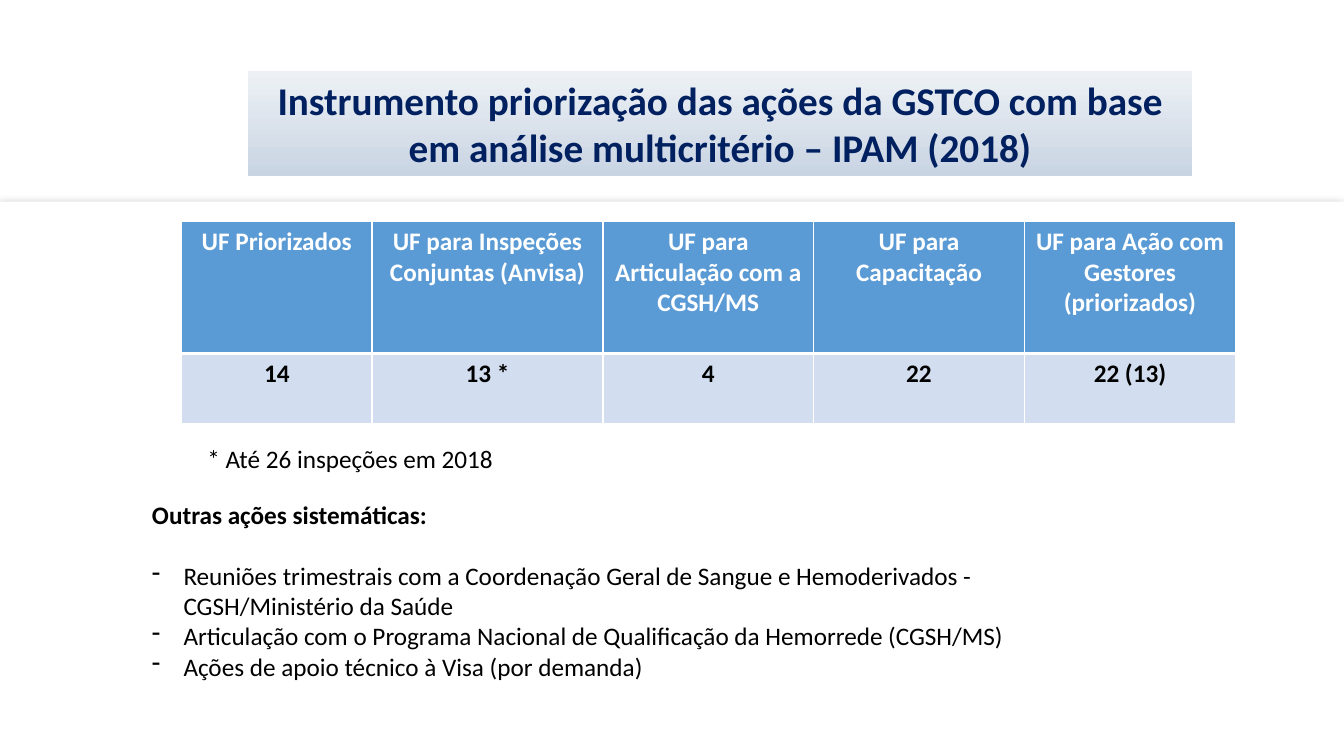
"""Build the slide on the IPAM prioritisation of GSTCO actions."""
from dataclasses import dataclass

from lxml import etree
from pptx import Presentation
from pptx.dml.color import RGBColor
from pptx.enum import shapes, text
from pptx.oxml import ns
from pptx.util import Pt


@dataclass(frozen=True)
class Theme:
    """Colours, type sizes and font of the slide."""
    font: str = "Calibri"
    title_size: int = 28
    body_size: int = 18
    white: str = "FFFFFF"
    black: str = "000000"
    navy: str = "002060"
    header: str = "5B9BD5"
    row: str = "D2DEEF"
    shadow: str = "A6A6A6"
    title_dark: str = "C9D4E3"
    title_light: str = "EDF1F5"


THEME = Theme()
TITLE = ("Instrumento priorização das ações da GSTCO com base "
         "em análise multicritério – IPAM (2018)")
ROWS = [
    ["UF Priorizados", "UF para Inspeções Conjuntas (Anvisa)",
     "UF para Articulação com a CGSH/MS", "UF para Capacitação",
     "UF para Ação com Gestores (priorizados)"],
    ["14", "13 *", "4", "22", "22 (13)"],
]
COLUMN_WIDTHS = [136, 165, 150.5, 150.5, 151]
ROW_HEIGHTS = [94.5, 50]
NOTE = "* Até 26 inspeções em 2018"
ACTIONS_HEADING = "Outras ações sistemáticas:"
ACTIONS = [
    "Reuniões trimestrais com a Coordenação Geral de Sangue e Hemoderivados - "
    "CGSH/Ministério da Saúde",
    "Articulação com o Programa Nacional de Qualificação da Hemorrede (CGSH/MS)",
    "Ações de apoio técnico à Visa (por demanda)",
]


def rgb(value):
    """Return the colour of a hex string."""
    return RGBColor.from_string(value)


def add_xml(parent, tag, **attributes):
    """Append a DrawingML element and return it."""
    values = {name: str(value) for name, value in attributes.items()}
    return etree.SubElement(parent, ns.qn(tag), values)


def style(p, size, color, bold=False, align=None):
    """Format the runs of a paragraph."""
    p.alignment = align
    for r in p.runs:
        r.font.name = THEME.font
        r.font.size = Pt(size)
        r.font.bold = bold
        r.font.color.rgb = rgb(color)


def add_box(s, box):
    """Add a wrapping text box and return its text frame."""
    tf = s.shapes.add_textbox(*map(Pt, box)).text_frame
    tf.word_wrap = True
    return tf


def add_rectangle(s, box):
    """Add a rectangle without line or inherited shadow."""
    sp = s.shapes.add_shape(shapes.MSO_SHAPE.RECTANGLE, *map(Pt, box))
    sp.shadow.inherit = False
    sp.line.fill.background()
    return sp


def add_panel(s, box):
    """Add the white content panel with its soft shadow."""
    sp = add_rectangle(s, box)
    sp.fill.solid()
    sp.fill.fore_color.rgb = rgb(THEME.white)
    effects = sp._element.spPr.find(ns.qn("a:effectLst"))
    shadow = add_xml(effects, "a:outerShdw", blurRad=Pt(5), dist=0, dir=0,
                     rotWithShape=0)
    color = add_xml(shadow, "a:srgbClr", val=THEME.shadow)
    add_xml(color, "a:alpha", val=42000)


def add_title(s, box):
    """Add the title on its gradient band."""
    sp = add_rectangle(s, box)
    sp.fill.gradient()
    sp.fill.gradient_angle = 90
    for stop, color in zip(sp.fill.gradient_stops,
                           (THEME.title_dark, THEME.title_light)):
        stop.color.rgb = rgb(color)
    tf = sp.text_frame
    tf.word_wrap = True
    tf.vertical_anchor = text.MSO_ANCHOR.TOP
    tf.text = TITLE
    style(tf.paragraphs[0], THEME.title_size, THEME.navy, True,
          text.PP_ALIGN.CENTER)


def add_borders(cell, top, bottom):
    """Draw the white borders of a cell."""
    tc_pr = cell._tc.get_or_add_tcPr()
    for side, width in (("L", 1), ("R", 1), ("T", top), ("B", bottom)):
        line = add_xml(tc_pr, f"a:ln{side}", w=Pt(width))
        add_xml(add_xml(line, "a:solidFill"), "a:srgbClr", val=THEME.white)


def add_priorities(s, box):
    """Add the table of prioritised states."""
    table = s.shapes.add_table(len(ROWS), len(COLUMN_WIDTHS),
                               *map(Pt, box)).table
    table.horz_banding = False
    for column, width in zip(table.columns, COLUMN_WIDTHS):
        column.width = Pt(width)
    looks = [(THEME.header, THEME.white, 1, 3), (THEME.row, THEME.black, 3, 1)]
    for i, (fill, color, top, bottom) in enumerate(looks):
        table.rows[i].height = Pt(ROW_HEIGHTS[i])
        for j, words in enumerate(ROWS[i]):
            cell = table.cell(i, j)
            add_borders(cell, top, bottom)
            cell.fill.solid()
            cell.fill.fore_color.rgb = rgb(fill)
            cell.text_frame.text = words
            style(cell.text_frame.paragraphs[0], THEME.body_size, color, True,
                  text.PP_ALIGN.CENTER)


def add_note(s, box):
    """Add the note under the table."""
    tf = add_box(s, box)
    tf.text = NOTE
    style(tf.paragraphs[0], THEME.body_size, THEME.black)


def add_actions(s, box):
    """Add the heading and the dashed list of other actions."""
    tf = add_box(s, box)
    tf.text = ACTIONS_HEADING
    heading = tf.paragraphs[0]
    heading.space_after = Pt(22)
    style(heading, THEME.body_size, THEME.black, True)
    for action in ACTIONS:
        p = tf.add_paragraph()
        p.text = action
        p_pr = p._p.get_or_add_pPr()
        p_pr.set("marL", str(Pt(22.5)))
        p_pr.set("indent", str(-Pt(22.5)))
        add_xml(p_pr, "a:buFontTx")
        add_xml(p_pr, "a:buChar", char="-")
        style(p, THEME.body_size, THEME.black)


def main():
    """Build and save the presentation."""
    prs = Presentation()
    prs.slide_width, prs.slide_height = Pt(960), Pt(540)
    s = prs.slides.add_slide(prs.slide_layouts[6])
    add_panel(s, (0, 144, 960, 396))
    add_priorities(s, (129.75, 158, sum(COLUMN_WIDTHS), sum(ROW_HEIGHTS)))
    add_actions(s, (101.5, 353, 669.5, 160))
    add_title(s, (177, 51, 674.5, 75))
    add_note(s, (141, 313, 372, 29))
    prs.save("out.pptx")


if __name__ == "__main__":
    main()
